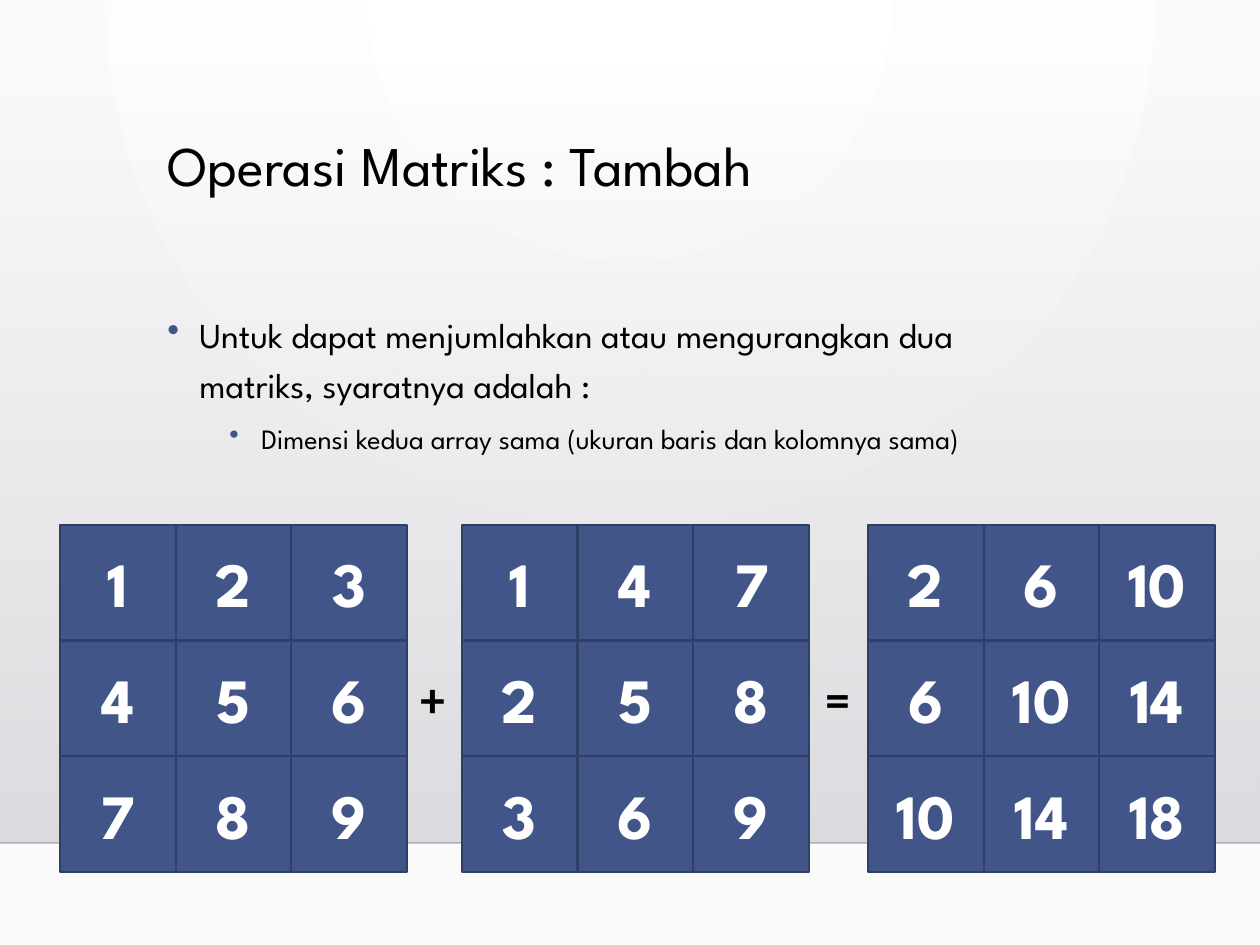
from dataclasses import dataclass

from lxml import etree
from pptx import Presentation
from pptx import util as u
from pptx.dml.color import RGBColor
from pptx.enum import shapes, text
from pptx.oxml.ns import qn


@dataclass(frozen=True)
class Theme:
    """Colours, fonts and type sizes of the slide."""
    accent: str = "415588"
    border: str = "303F65"
    ink: str = "000000"
    white: str = "FFFFFF"
    paper: str = "FAFAFA"
    shade_top: str = "DCDCE0"
    shade_end: str = "DEDEE2"
    floor_line: str = "000001"
    font: str = "League Spartan"
    operator_font: str = "Calibri"
    title: int = 32
    body: int = 20
    detail: int = 16
    cell: int = 36
    operator: int = 28


T = Theme()
WIDTH, HEIGHT, FLOOR = 1260, 945, 843
MATRIX_TOP, MATRIX_SIDE = 525, 347


def px(n):
    """Turn px into EMU."""
    return u.Emu(round(n * 914400 / 126))


def rgb(value):
    """Turn a hex string into a colour."""
    return RGBColor.from_string(value)


def set_alpha(color_element, percent):
    """Give a colour element an opacity."""
    etree.SubElement(color_element, qn("a:alpha")).set("val", str(percent * 1000))


def set_gradient(fill, first, last):
    """Apply a two-colour gradient running from top to bottom."""
    fill.gradient()
    fill.gradient_angle = 270
    for stop, color in zip(fill.gradient_stops, (first, last)):
        stop.color.rgb = rgb(color)


def add_bullet(p, margin):
    """Give a paragraph an accent bullet and a hanging indent."""
    pPr = p._p.get_or_add_pPr()
    pPr.set("marL", str(px(margin)))
    pPr.set("indent", str(-px(32)))
    color = etree.SubElement(pPr, qn("a:buClr"))
    etree.SubElement(color, qn("a:srgbClr")).set("val", T.accent)
    etree.SubElement(pPr, qn("a:buChar")).set("char", "•")


def write(p, content, size, font=T.font, color=T.ink, bold=False,
          align=None, spacing=None, before=None, bullet=None):
    """Write one formatted paragraph."""
    if spacing:
        p.line_spacing = spacing
    if before is not None:
        p.space_before = u.Pt(before)
    if align is not None:
        p.alignment = align
    if bullet:
        add_bullet(p, bullet)
    r = p.add_run()
    r.text = content
    r.font.size, r.font.name, r.font.bold = u.Pt(size), font, bold
    r.font.color.rgb = rgb(color)


def add_text_frame(slide, x, y, w, h, wrap=True):
    """Add a text box and return its text frame."""
    tf = slide.shapes.add_textbox(px(x), px(y), px(w), px(h)).text_frame
    tf.word_wrap = wrap
    return tf


def add_rect(slide, x, y, w, h):
    """Add a rectangle without a shadow."""
    sp = slide.shapes.add_shape(shapes.MSO_SHAPE.RECTANGLE, px(x), px(y), px(w), px(h))
    sp.shadow.inherit = False
    return sp


def add_backdrop(slide):
    """Add the radial background, the fading wall and the floor line."""
    fill = slide.background.fill
    set_gradient(fill, T.white, T.paper)
    lin = slide.background._cSld.find(".//" + qn("a:lin"))
    radial = etree.Element(qn("a:path"), path="circle")
    etree.SubElement(radial, qn("a:fillToRect"), l="43000", t="0", r="43000", b="100000")
    lin.getparent().replace(lin, radial)

    wall = add_rect(slide, 0, 64, WIDTH, FLOOR - 64)
    set_gradient(wall.fill, T.shade_top, T.shade_end)
    set_alpha(wall._element.find(".//" + qn("a:srgbClr")), 0)
    wall.line.fill.background()

    line = slide.shapes.add_connector(
        shapes.MSO_CONNECTOR.STRAIGHT, 0, px(FLOOR), px(WIDTH), px(FLOOR))
    line.line.width = u.Pt(1)
    line.line.color.rgb = rgb(T.floor_line)
    set_alpha(line._element.find(".//" + qn("a:ln") + "//" + qn("a:srgbClr")), 20)
    etree.SubElement(line._element.spPr, qn("a:effectLst"))


def add_matrix(slide, left, rows):
    """Add a square grid of numbered cells."""
    side = MATRIX_SIDE / len(rows)
    for i, row in enumerate(rows):
        for j, value in enumerate(row):
            sp = add_rect(slide, left + j * side, MATRIX_TOP + i * side, side, side)
            sp.fill.solid()
            sp.fill.fore_color.rgb = rgb(T.accent)
            sp.line.color.rgb = rgb(T.border)
            sp.line.width = u.Pt(1.25)
            tf = sp.text_frame
            tf.vertical_anchor = text.MSO_ANCHOR.MIDDLE
            write(tf.paragraphs[0], str(value), T.cell, color=T.white, bold=True,
                  align=text.PP_ALIGN.CENTER)


def add_operator(slide, x, sign):
    """Add an arithmetic sign between two matrices."""
    tf = add_text_frame(slide, x, 662, 50, 72, wrap=False)
    tf.auto_size = text.MSO_AUTO_SIZE.SHAPE_TO_FIT_TEXT
    write(tf.paragraphs[0], sign, T.operator, font=T.operator_font, bold=True)


def main():
    """Build and save the slide."""
    prs = Presentation()
    prs.slide_width, prs.slide_height = px(WIDTH), px(HEIGHT)
    slide = prs.slides.add_slide(prs.slide_layouts[6])
    add_backdrop(slide)

    title = add_text_frame(slide, 155, 132, 906, 145)
    write(title.paragraphs[0], "Operasi Matriks : Tambah", T.title, spacing=0.9)
    body = add_text_frame(slide, 155, 299, 906, 454)
    write(body.paragraphs[0],
          "Untuk dapat menjumlahkan atau mengurangkan dua matriks, syaratnya adalah :",
          T.body, spacing=1.2, before=0, bullet=32)
    write(body.add_paragraph(),
          "Dimensi kedua array sama (ukuran baris dan kolomnya sama)",
          T.detail, spacing=1.2, before=5, bullet=94)

    first = [[1, 2, 3], [4, 5, 6], [7, 8, 9]]
    second = [list(column) for column in zip(*first)]
    total = [[a + b for a, b in zip(*pair)] for pair in zip(first, second)]
    for left, rows in ((60, first), (462, second), (868, total)):
        add_matrix(slide, left, rows)
    for x, sign in ((408, "+"), (813, "=")):
        add_operator(slide, x, sign)
    prs.save("out.pptx")


if __name__ == "__main__":
    main()
